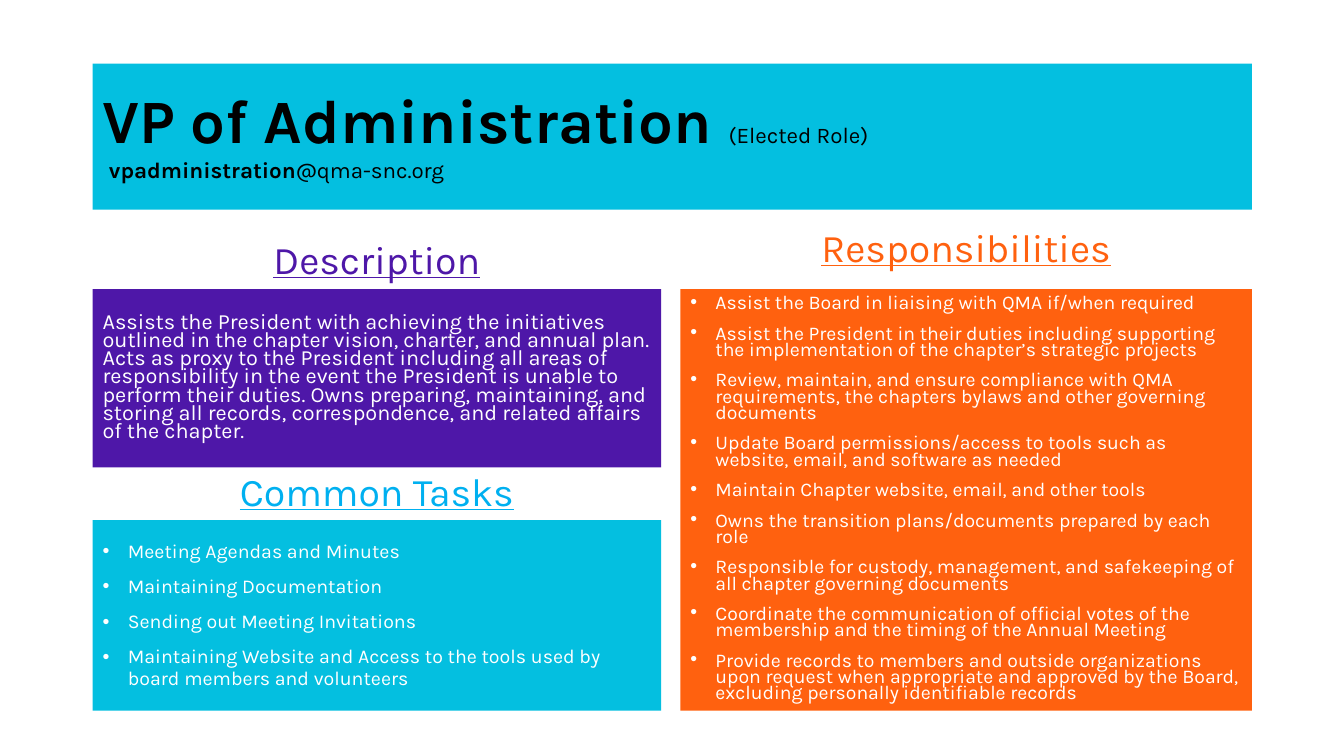
from lxml.etree import SubElement
from pptx import Presentation
from pptx.dml.color import RGBColor
from pptx.enum.shapes import MSO_SHAPE
from pptx.enum.text import MSO_ANCHOR, PP_ALIGN
from pptx.oxml.ns import qn
from pptx.util import Pt

BLACK = RGBColor(0x00, 0x00, 0x00)
WHITE = RGBColor(0xFF, 0xFF, 0xFF)
CYAN = RGBColor(0x04, 0xBF, 0xE0)
SKY = RGBColor(0x00, 0xB0, 0xF0)
PURPLE = RGBColor(0x4E, 0x17, 0xA8)
ORANGE = RGBColor(0xFF, 0x61, 0x0F)

LEFT, LEFT_WIDTH = 66.2, 406
RIGHT, RIGHT_WIDTH = 486, 408.2
BOX_TOP, BOTTOM = 206.6, 507.6
TASKS_TOP = 371.5
HEADING_HEIGHT = 64.8

DESCRIPTION = (
    "Assists the President with achieving the initiatives outlined in the chapter vision, "
    "charter, and annual plan. Acts as proxy to the President including all areas of "
    "responsibility in the event the President is unable to perform their duties. Owns "
    "preparing, maintaining, and storing all records, correspondence, and related affairs "
    "of the chapter."
)
RESPONSIBILITIES = [
    "Assist the Board in liaising with QMA if/when required",
    "Assist the President in their duties including supporting the implementation of the "
    "chapter’s strategic projects",
    "Review, maintain, and ensure compliance with QMA requirements, the chapters bylaws and "
    "other governing documents",
    "Update Board permissions/access to tools such as website, email, and software as needed",
    "Maintain Chapter website, email, and other tools",
    "Owns the transition plans/documents prepared by each role",
    "Responsible for custody, management, and safekeeping of all chapter governing documents",
    "Coordinate the communication of official votes of the membership and the timing of the "
    "Annual Meeting",
    "Provide records to members and outside organizations upon request when appropriate and "
    "approved by the Board, excluding personally identifiable records",
]
TASKS = [
    "Meeting Agendas and Minutes",
    "Maintaining Documentation",
    "Sending out Meeting Invitations",
    "Maintaining Website and Access to the tools used by board members and volunteers",
]


def set_attributes(target, values):
    for name, value in values.items():
        setattr(target, name, value)


class RoleSlide:
    font_name = "Karla"
    indent = 18

    def __init__(self, presentation):
        self.slide = presentation.slides.add_slide(presentation.slide_layouts[6])

    def add_run(self, paragraph, text, size, color, **font_format):
        run = paragraph.add_run()
        run.text = text
        run.font.color.rgb = color
        set_attributes(run.font, {"name": self.font_name, "size": Pt(size), **font_format})

    def add_bullet(self, paragraph):
        properties = paragraph._p.get_or_add_pPr()
        properties.set("marL", str(Pt(self.indent)))
        properties.set("indent", str(-Pt(self.indent)))
        SubElement(properties, qn("a:buFont"), typeface="Arial")
        SubElement(properties, qn("a:buChar"), char="•")

    def panel(self, left, top, width, height, color):
        """Draw a filled rectangle and return its text frame."""
        shape = self.slide.shapes.add_shape(
            MSO_SHAPE.RECTANGLE, Pt(left), Pt(top), Pt(width), Pt(height))
        shape.shadow.inherit = False
        shape.fill.solid()
        shape.fill.fore_color.rgb = color
        shape.line.fill.background()
        set_attributes(shape.text_frame,
                       {"word_wrap": True, "vertical_anchor": MSO_ANCHOR.MIDDLE})
        return shape.text_frame

    def banner(self, left, top, width, height, color, lines):
        paragraph = self.panel(left, top, width, height, color).paragraphs[0]
        set_attributes(paragraph, {"alignment": PP_ALIGN.LEFT, "line_spacing": 0.9})
        for number, line in enumerate(lines):
            if number:
                paragraph.add_line_break()
            for text, size, bold in line:
                self.add_run(paragraph, text, size, BLACK, bold=bold)

    def heading(self, text, left, bottom, width, color):
        box = self.slide.shapes.add_textbox(
            Pt(left), Pt(bottom - HEADING_HEIGHT), Pt(width), Pt(HEADING_HEIGHT))
        set_attributes(box.text_frame,
                       {"word_wrap": True, "vertical_anchor": MSO_ANCHOR.BOTTOM})
        paragraph = box.text_frame.paragraphs[0]
        set_attributes(paragraph, {"alignment": PP_ALIGN.CENTER, "line_spacing": 0.9,
                                   "space_before": Pt(10)})
        self.add_run(paragraph, text, 28, color, underline=True)

    def text_panel(self, left, top, width, height, color, texts, size, spacing, bullets=True):
        frame = self.panel(left, top, width, height, color)
        for number, text in enumerate(texts):
            paragraph = frame.add_paragraph() if number else frame.paragraphs[0]
            set_attributes(paragraph, {"alignment": PP_ALIGN.LEFT, "line_spacing": spacing,
                                       "space_before": Pt(10)})
            if bullets:
                self.add_bullet(paragraph)
            self.add_run(paragraph, text, size, WHITE)


def main():
    presentation = Presentation()
    set_attributes(presentation, {"slide_width": Pt(960), "slide_height": Pt(540)})
    role = RoleSlide(presentation)

    role.banner(LEFT, 45.4, RIGHT + RIGHT_WIDTH - LEFT, 104.4, CYAN, [
        [("VP of Administration ", 44, True), ("(Elected Role)", 16, False)],
        [(" ", 18, True), ("vpadministration", 16, True), ("@qma-snc.org", 16, False)],
    ])
    role.heading("Description", LEFT, 205.9, LEFT_WIDTH, PURPLE)
    role.text_panel(LEFT, BOX_TOP, LEFT_WIDTH, 127.4, PURPLE, [DESCRIPTION], 15.5, 0.7,
                    bullets=False)
    role.heading("Responsibilities", RIGHT, 197.3, RIGHT_WIDTH, ORANGE)
    role.text_panel(RIGHT, BOX_TOP, RIGHT_WIDTH, BOTTOM - BOX_TOP, ORANGE,
                    RESPONSIBILITIES, 13.9, 0.7)
    role.text_panel(LEFT, TASKS_TOP, LEFT_WIDTH, BOTTOM - TASKS_TOP, CYAN, TASKS, 14, 0.9)
    role.heading("Common Tasks", LEFT, TASKS_TOP, LEFT_WIDTH, SKY)

    presentation.save("out.pptx")


if __name__ == "__main__":
    main()
